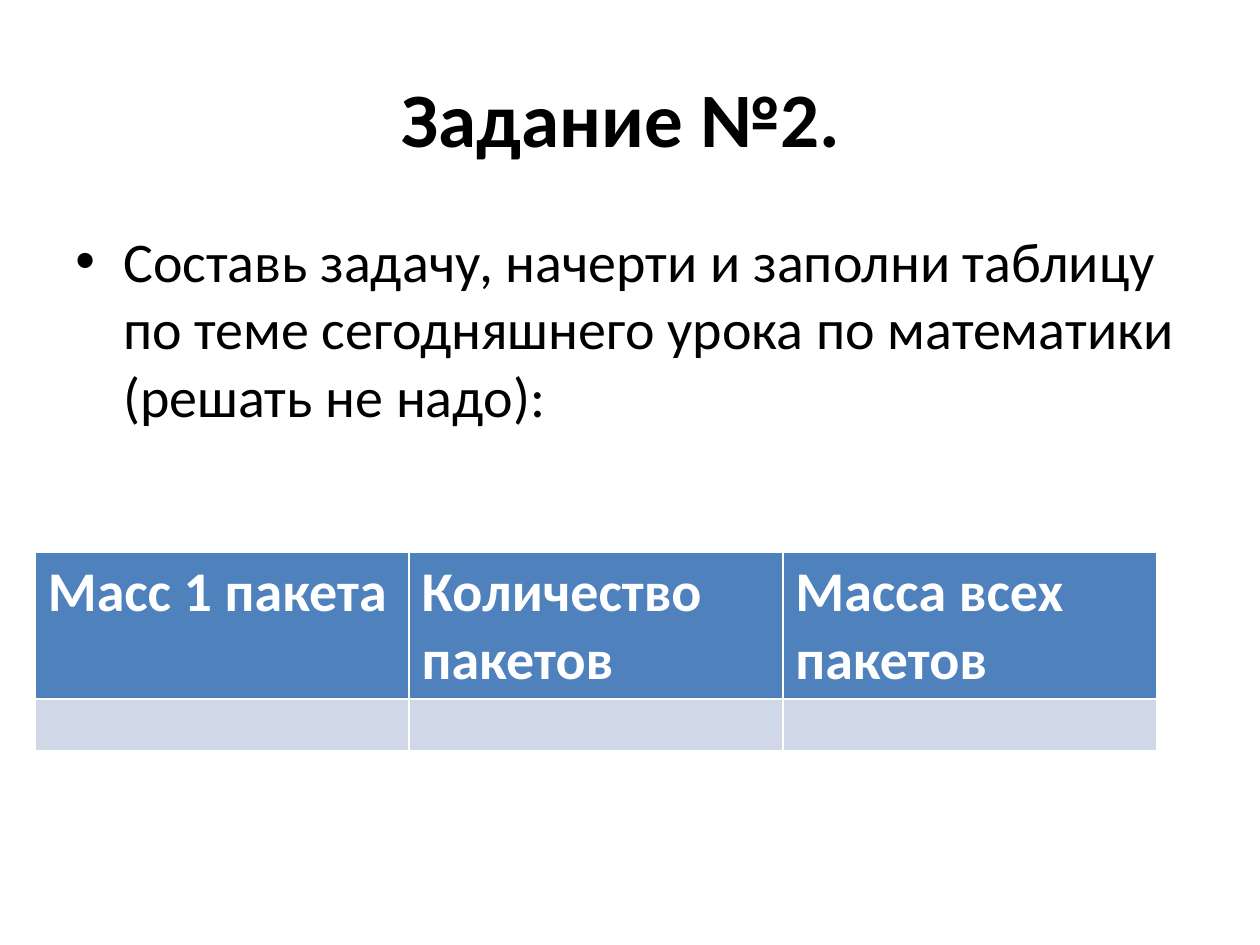
from lxml import etree
from pptx import Presentation
from pptx.dml.color import RGBColor
from pptx.enum.text import MSO_ANCHOR, PP_ALIGN
from pptx.oxml.ns import qn
from pptx.util import Inches, Pt

CENTER = PP_ALIGN.CENTER
MIDDLE = MSO_ANCHOR.MIDDLE
TOP = MSO_ANCHOR.TOP
FONT = "Calibri"
COLORS = {"text": "000000", "header": "4F81BD", "header_text": "FFFFFF", "body_row": "D0D8E8"}
HEADERS = ["Масс 1 пакета", "Количество пакетов", "Масса всех пакетов"]
TASK = (
    "Составь задачу, начерти и заполни таблицу по теме сегодняшнего урока "
    "по математики (решать не надо):"
)


def set_font(paragraph, size, color, bold=False):
    """Set the typeface, size, colour and weight of a paragraph."""
    font = paragraph.font
    font.name = FONT
    font.size = Pt(size)
    font.bold = bold
    font.color.rgb = RGBColor.from_string(COLORS[color])


def add_text(slide, text, left, top, width, height, anchor):
    """Add a wrapping text box and return its paragraph."""
    shape = slide.shapes.add_textbox(Inches(left), Inches(top), Inches(width), Inches(height))
    frame = shape.text_frame
    frame.word_wrap = True
    frame.vertical_anchor = anchor
    frame.text = text
    return frame.paragraphs[0]


def add_bullet(paragraph, indent):
    """Give a paragraph a round bullet with a hanging indent."""
    properties = paragraph._p.get_or_add_pPr()
    properties.set("marL", str(Inches(indent)))
    properties.set("indent", str(-Inches(indent)))
    etree.SubElement(properties, qn("a:buFont")).set("typeface", "Arial")
    etree.SubElement(properties, qn("a:buChar")).set("char", "•")


def add_packet_table(slide, left, top, width, row_heights):
    """Add the table with a header row and an empty row to fill in."""
    height = Inches(sum(row_heights))
    table = slide.shapes.add_table(
        len(row_heights), len(HEADERS), Inches(left), Inches(top), Inches(width), height
    ).table
    for row, row_height, fill in zip(table.rows, row_heights, ("header", "body_row")):
        row.height = Inches(row_height)
        for cell in row.cells:
            cell.fill.solid()
            cell.fill.fore_color.rgb = RGBColor.from_string(COLORS[fill])
    for cell, header in zip(table.rows[0].cells, HEADERS):
        cell.text = header
        set_font(cell.text_frame.paragraphs[0], 32, "header_text", bold=True)


def main():
    """Build the task slide and save it."""
    presentation = Presentation()
    presentation.slide_width = Inches(10)
    presentation.slide_height = Inches(7.5)
    slide = presentation.slides.add_slide(presentation.slide_layouts[6])

    title = add_text(slide, "Задание №2. ", 0.5, 0.3, 9, 1.25, MIDDLE)
    title.alignment = CENTER
    set_font(title, 44, "text", bold=True)

    task = add_text(slide, TASK, 0.5, 1.75, 9, 4.95, TOP)
    add_bullet(task, 0.38)
    set_font(task, 32, "text")

    add_packet_table(slide, 0.28, 4.38, 8.9, (1.16, 0.41))
    presentation.save("out.pptx")


if __name__ == "__main__":
    main()
